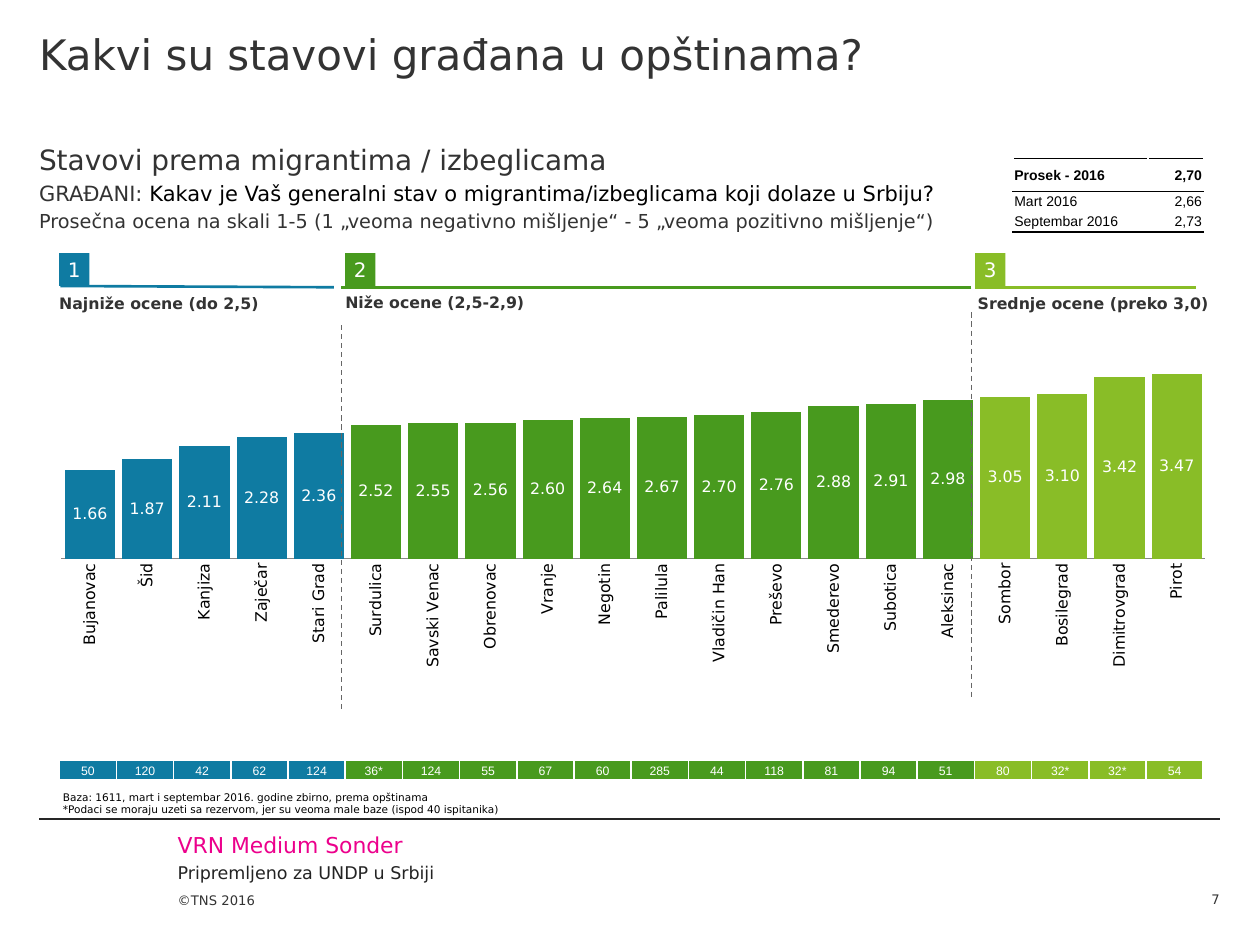
from dataclasses import dataclass
from typing import Any

from lxml.etree import SubElement
from pptx import Presentation
from pptx.chart.data import CategoryChartData
from pptx.dml.color import RGBColor
from pptx.enum.chart import XL_CHART_TYPE, XL_LABEL_POSITION, XL_TICK_MARK
from pptx.enum.dml import MSO_LINE
from pptx.enum.shapes import MSO_CONNECTOR, MSO_SHAPE
from pptx.enum.text import MSO_ANCHOR, MSO_AUTO_SIZE, PP_ALIGN
from pptx.oxml import parse_xml
from pptx.oxml.ns import nsdecls, qn
from pptx.util import Inches, Pt

HUES = {"blue": "0F7BA2", "green": "489A1E", "lime": "89BD27", "ink": "333333",
        "dark": "262626", "black": "000000", "white": "FFFFFF", "pink": "EC008C",
        "gray": "666666", "rule": "878787", "soft": "232323"}
SANS = "DejaVu Sans"
NO_PAD = (0, 0, 0, 0)
CELL_PAD = (0.01, 0.01, 0.01, 0)


@dataclass
class Town:
    name: str
    score: float
    base: str


@dataclass
class Band:
    mark: str
    hue: str
    left: float
    rule: tuple[float, float, float, float]
    label: str
    spot: tuple[float, float, float]
    towns: list[Town]


@dataclass
class Note:
    text: str
    box: tuple[float, float, float, float]
    size: float
    hue: str
    align: Any = PP_ALIGN.LEFT
    anchor: Any = MSO_ANCHOR.TOP
    bold: bool = False


BANDS = [
    Band("1", "blue", 0.47, (2.65, 2.28, 0.48, 2.27), "Najniže ocene (do 2,5)", (0.47, 2.33, 1.8), [
        Town("Bujanovac", 1.66, "50"), Town("Šid", 1.87, "120"), Town("Kanjiza", 2.11, "42"),
        Town("Zaječar", 2.28, "62"), Town("Stari Grad", 2.36, "124")]),
    Band("2", "green", 2.74, (7.71, 2.28, 2.71, 2.28), "Niže ocene (2,5-2,9)", (2.74, 2.32, 2.85), [
        Town("Surdulica", 2.52, "36*"), Town("Savski Venac", 2.55, "124"),
        Town("Obrenovac", 2.56, "55"), Town("Vranje", 2.6, "67"), Town("Negotin", 2.64, "60"),
        Town("Palilula", 2.67, "285"), Town("Vladičin Han", 2.7, "44"),
        Town("Preševo", 2.76, "118"), Town("Smederevo", 2.88, "81"),
        Town("Subotica", 2.91, "94"), Town("Aleksinac", 2.98, "51")]),
    Band("3", "lime", 7.74, (9.49, 2.28, 7.74, 2.28), "Srednje ocene (preko 3,0)", (7.76, 2.33, 1.96), [
        Town("Sombor", 3.05, "80"), Town("Bosilegrad", 3.1, "32*"),
        Town("Dimitrovgrad", 3.42, "32*"), Town("Pirot", 3.47, "54")]),
]
TOWNS = [(town, band.hue) for band in BANDS for town in band.towns]
NOTES = [
    Note("©TNS 2016", (1.41, 6.92, 0.83, 0.29), 7.5, "ink", anchor=MSO_ANCHOR.BOTTOM),
    Note("VRN Medium Sonder", (1.41, 6.6, 3.31, 0.21), 12.5, "pink"),
    Note("Pripremljeno za UNDP u Srbiji", (1.41, 6.84, 6.81, 0.16), 10, "soft"),
    Note("7", (9.13, 6.92, 0.55, 0.28), 7.5, "ink", PP_ALIGN.RIGHT, MSO_ANCHOR.BOTTOM),
]
LINES = [
    [("Stavovi prema migrantima / izbeglicama", 16, "ink")],
    [("GRAĐANI: ", 12, "ink"),
     ("Kakav je Vaš generalni stav o migrantima/izbeglicama koji dolaze u Srbiju?", 12, "black")],
    [("Prosečna ocena na skali 1-5 (1 „veoma negativno mišljenje“ - 5 „veoma pozitivno mišljenje“)",
      11, "ink")],
]
MEANS = [("Prosek - 2016", "2,70"), ("Mart 2016", "2,66"), ("Septembar 2016", "2,73")]
BASIS = ["Baza: 1611, mart i septembar 2016. godine zbirno, prema opštinama",
         "*Podaci se moraju uzeti sa rezervom, jer su veoma male baze (ispod 40 ispitanika)"]


def tint(hue: str) -> RGBColor:
    return RGBColor.from_string(HUES[hue])


def assign(item: Any, values: dict[str, Any]) -> None:
    for key, value in values.items():
        setattr(item, key, value)


def ink(font: Any, size: float, hue: str, face: str = SANS, bold: bool = False) -> None:
    assign(font, {"size": Pt(size), "name": face, "bold": bold})
    font.color.rgb = tint(hue)


def pad(item: Any, sides: tuple[float, ...]) -> None:
    names = ("margin_left", "margin_top", "margin_right", "margin_bottom")
    assign(item, dict(zip(names, map(Inches, sides))))


def place(shape: Any, *box: float) -> None:
    assign(shape, dict(zip(("left", "top", "width", "height"), map(Inches, box))))


def add_run(para: Any, text: str, *look: Any) -> None:
    run = para.add_run()
    run.text = text
    ink(run.font, *look)


def draw_note(slide: Any, note: Note) -> None:
    frame = slide.shapes.add_textbox(*map(Inches, note.box)).text_frame
    pad(frame, NO_PAD)
    assign(frame, {"word_wrap": True, "vertical_anchor": note.anchor})
    para = frame.paragraphs[0]
    para.alignment = note.align
    add_run(para, note.text, note.size, note.hue, SANS, note.bold)


def draw_line(slide: Any, ends: tuple[float, ...], hue: str, width: float, dash: bool = False) -> None:
    rule = slide.shapes.add_connector(MSO_CONNECTOR.STRAIGHT, *map(Inches, ends))
    rule.line.color.rgb = tint(hue)
    rule.line.width = Pt(width)
    if dash:
        rule.line.dash_style = MSO_LINE.DASH
    SubElement(rule._element.spPr, qn("a:effectLst"))


def draw_band(slide: Any, band: Band) -> None:
    draw_line(slide, band.rule, band.hue, 1.5)
    box = slide.shapes.add_shape(MSO_SHAPE.RECTANGLE, *map(Inches, (band.left, 2.01, 0.24, 0.26)))
    box.shadow.inherit = False
    box.fill.solid()
    box.fill.fore_color.rgb = tint(band.hue)
    box.line.fill.background()
    frame = box.text_frame
    pad(frame, NO_PAD)
    assign(frame, {"word_wrap": False, "vertical_anchor": MSO_ANCHOR.MIDDLE})
    frame.paragraphs[0].alignment = PP_ALIGN.CENTER
    add_run(frame.paragraphs[0], band.mark, 11.4, "white")
    draw_note(slide, Note(band.label, (*band.spot, 0.15), 9, "ink", bold=True))


def draw_chart(slide: Any) -> None:
    data = CategoryChartData(number_format="#,##0.00")
    data.categories = [town.name for town, _ in TOWNS]
    data.add_series("Series 1", [town.score for town, _ in TOWNS])
    box = map(Inches, (0.31, 2.69, 9.37, 3.61))
    chart = slide.shapes.add_chart(XL_CHART_TYPE.COLUMN_STACKED, *box, data).chart
    assign(chart, {"has_legend": False, "has_title": False})
    ink(chart.font, 18, "black")
    assign(chart.value_axis, {"visible": False, "has_major_gridlines": False,
                              "minimum_scale": 0, "maximum_scale": 4})
    axis = chart.category_axis
    axis.major_tick_mark = XL_TICK_MARK.NONE
    ink(axis.tick_labels.font, 9, "black")
    axis.format.line.color.rgb = tint("rule")
    axis._element.txPr.bodyPr.set("rot", "-5400000")
    plot = chart.plots[0]
    assign(plot, {"gap_width": 14, "overlap": 100, "vary_by_categories": False,
                  "has_data_labels": True})
    labels = plot.data_labels
    assign(labels, {"show_value": True, "number_format": "#,##0.00",
                    "number_format_is_linked": False, "position": XL_LABEL_POSITION.CENTER})
    ink(labels.font, 9, "white")
    for spot, (_, hue) in enumerate(TOWNS):
        fill = plot.series[0].points[spot].format.fill
        fill.solid()
        fill.fore_color.rgb = tint(hue)
    area = chart._chartSpace.chart.plotArea
    for old in area.findall(qn("c:layout")):
        area.remove(old)
    sizes = "".join(f'<c:{key} val="{value}"/>' for key, value in (
        ("layoutTarget", "inner"), ("xMode", "edge"), ("yMode", "edge"),
        ("x", 0.019), ("y", 0.016), ("w", 0.969), ("h", 0.467)))
    area.insert(0, parse_xml(f'<c:layout {nsdecls("c")}><c:manualLayout>{sizes}'
                             '</c:manualLayout></c:layout>'))


def draw_grid(slide: Any, spot: tuple[float, float], cols: list[float], rows: list[float]) -> Any:
    box = map(Inches, (*spot, sum(cols), sum(rows)))
    table = slide.shapes.add_table(len(rows), len(cols), *box).table
    assign(table, {"first_row": False, "horz_banding": False})
    for col, width in zip(table.columns, cols):
        col.width = Inches(width)
    for row, height in zip(table.rows, rows):
        row.height = Inches(height)
    return table


def fill_cell(cell: Any, lines: list[str], look: tuple[Any, ...], align: Any, sides: tuple[float, ...],
              fill: str = "", edges: tuple[tuple[str, str, float], ...] = ()) -> None:
    pad(cell, sides)
    cell.vertical_anchor = MSO_ANCHOR.MIDDLE
    for spot, text in enumerate(lines):
        frame = cell.text_frame
        para = frame.add_paragraph() if spot else frame.paragraphs[0]
        para.alignment = align
        add_run(para, text, *look)
    if not lines:
        SubElement(cell.text_frame.paragraphs[0]._p, qn("a:endParaRPr"), sz=str(look[0] * 100))
    for side, hue, width in edges:
        cell._tc.get_or_add_tcPr().append(parse_xml(
            f'<a:ln{side} {nsdecls("a")} w="{Pt(width)}"><a:solidFill>'
            f'<a:srgbClr val="{HUES[hue]}"/></a:solidFill></a:ln{side}>'))
    if fill:
        cell.fill.solid()
        cell.fill.fore_color.rgb = tint(fill)
    else:
        cell.fill.background()


def draw_tables(slide: Any) -> None:
    basis = draw_grid(slide, (0.48, 6.14), [8.32], [0.14, 0.2])
    for row, lines in enumerate(([], BASIS)):
        fill_cell(basis.cell(row, 0), lines, (6, "black"), PP_ALIGN.LEFT, (0.02, 0, 0.02, 0))
    count = draw_grid(slide, (0.47, 6.03), [9.08 / len(TOWNS)] * len(TOWNS), [0.17])
    edges = tuple((side, "white", 3 if side == "B" else 1) for side in "LRTB")
    for col, (town, hue) in enumerate(TOWNS):
        fill_cell(count.cell(0, col), [town.base], (7, "white", "Arial"), PP_ALIGN.CENTER,
                  CELL_PAD, hue, edges)
    means = draw_grid(slide, (8.04, 1.26), [1.07, 0.44], [0.26, 0.15, 0.17])
    rules = ["black", "black", "white", "black"]
    for row, pair in enumerate(MEANS):
        edges = (("L", "white", 1), ("R", "white", 1), ("T", rules[row], 1), ("B", rules[row + 1], 1))
        for col, text in enumerate(pair):
            fill_cell(means.cell(row, col), [text], (8, "black", "Arial", row == 0),
                      PP_ALIGN.RIGHT if col else PP_ALIGN.LEFT, CELL_PAD, "white", edges)


def set_text(shape: Any, lines: list[list[tuple]], sides: tuple[float, ...]) -> None:
    frame = shape.text_frame
    pad(frame, sides)
    assign(frame, {"word_wrap": True, "vertical_anchor": MSO_ANCHOR.TOP, "auto_size": MSO_AUTO_SIZE.NONE})
    for spot, runs in enumerate(lines):
        para = frame.add_paragraph() if spot else frame.paragraphs[0]
        props = para._p.get_or_add_pPr()
        props.set("marL", "0")
        props.set("indent", "0")
        SubElement(props, qn("a:buNone"))
        assign(para, {"alignment": PP_ALIGN.LEFT, "space_before": Pt(0.2 * runs[0][1] if spot else 0)})
        for run in runs:
            add_run(para, *run)


def main() -> None:
    deck = Presentation()
    assign(deck, {"slide_width": Inches(10), "slide_height": Inches(7.5)})
    slide = deck.slides.add_slide(deck.slide_layouts[1])
    title, body = slide.placeholders
    place(title, 0.31, 0, 9.37, 1.13)
    set_text(title, [[("Kakvi su stavovi građana u opštinama?", 24, "ink")]], (0, 0.23, 0, 0))
    place(body, 0.31, 1.13, 9.37, 5.25)
    set_text(body, LINES, NO_PAD)
    draw_line(slide, (0.31, 6.5, 9.68, 6.5), "dark", 0.75)
    draw_chart(slide)
    for left, top in ((2.71, 2.58), (7.71, 2.48)):
        draw_line(slide, (left, top, left, top + 3.05), "gray", 0.75, True)
    for band in BANDS:
        draw_band(slide, band)
    draw_tables(slide)
    for note in NOTES:
        draw_note(slide, note)
    deck.save("out.pptx")


if __name__ == "__main__":
    main()
